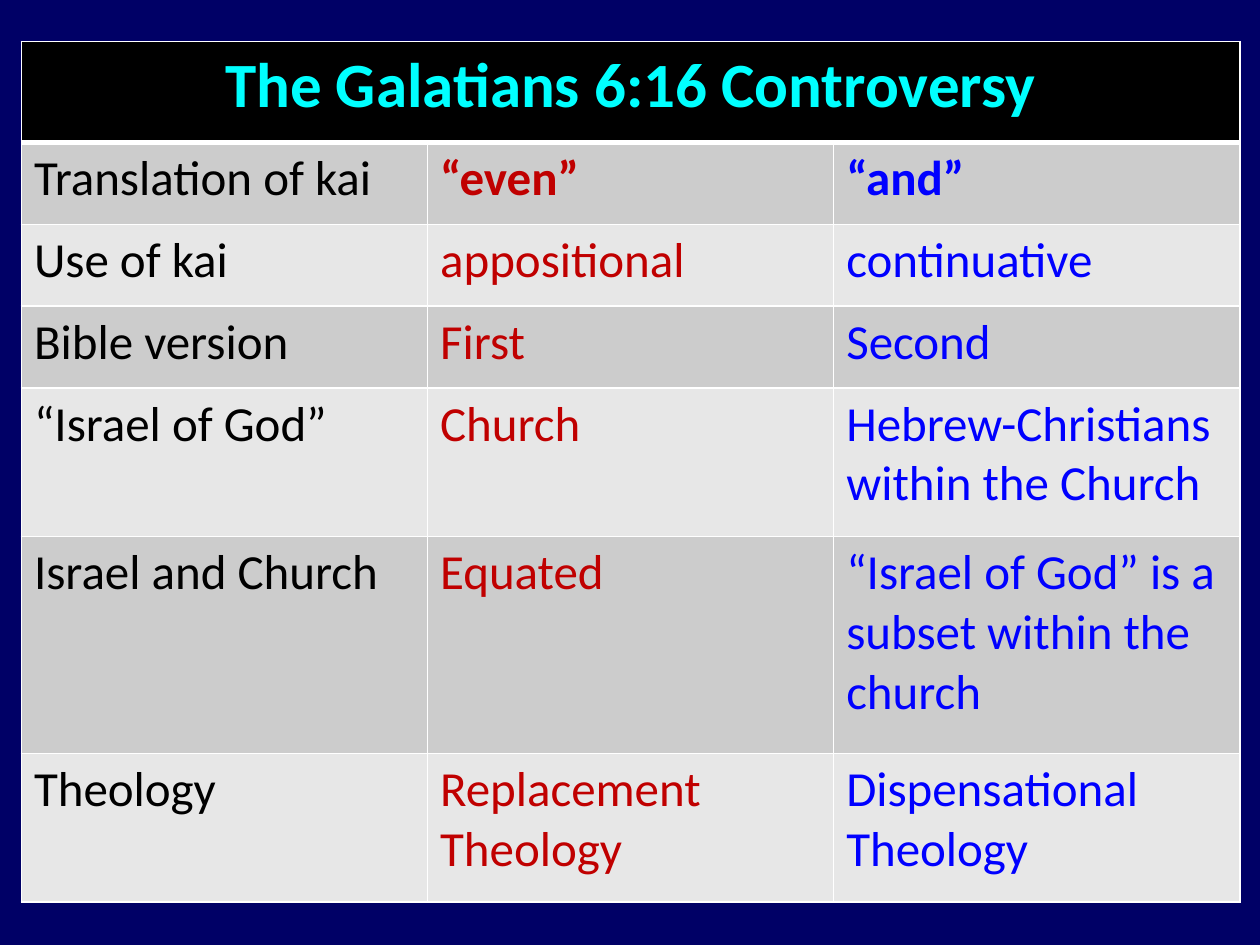
from lxml import etree
from pptx import Presentation
from pptx.dml.color import RGBColor
from pptx.enum import text
from pptx.oxml import ns
from pptx.util import Inches, Pt

COLORS = {
    "background": "000066", "header": "000000", "title": "00FFFF",
    "odd_row": "CCCCCC", "even_row": "E7E7E7", "border": "FFFFFF",
    "topic": "000000", "even": "C00000", "and": "0000FF",
}
TITLE = "The Galatians 6:16 Controversy"
ROWS = [
    ("Translation of kai", "“even”", "“and”"),
    ("Use of kai", "appositional", "continuative"),
    ("Bible version", "First", "Second"),
    ("“Israel of God”", "Church", "Hebrew-Christians within the Church"),
    ("Israel and Church", "Equated", "“Israel of God” is a subset within the church"),
    ("Theology", "Replacement Theology", "Dispensational Theology"),
]
ROW_HEIGHTS = [0.8, 0.65, 0.65, 0.65, 1.18, 1.72, 1.18]
COLUMN_COLORS = ["topic", "even", "and"]


def style_cell(cell, fill, widths):
    """Fill a cell and draw its borders; widths maps each side to points."""
    properties = cell._tc.get_or_add_tcPr()
    for side, width in widths.items():
        line = etree.SubElement(properties, ns.qn(f"a:ln{side}"), w=str(Pt(width)))
        solid = etree.SubElement(line, ns.qn("a:solidFill"))
        etree.SubElement(solid, ns.qn("a:srgbClr"), val=COLORS["border"])
    cell.fill.solid()
    cell.fill.fore_color.rgb = RGBColor.from_string(COLORS[fill])


def write_cell(cell, words, color, **font_format):
    cell.text = words
    font = cell.text_frame.paragraphs[0].runs[0].font
    font.color.rgb = RGBColor.from_string(COLORS[color])
    for name, value in {"name": "Calibri", **font_format}.items():
        setattr(font, name, value)


presentation = Presentation()
presentation.slide_width, presentation.slide_height = Inches(10), Inches(7.5)
slide = presentation.slides.add_slide(presentation.slide_layouts[6])
slide.background.fill.solid()
slide.background.fill.fore_color.rgb = RGBColor.from_string(COLORS["background"])

table = slide.shapes.add_table(
    len(ROW_HEIGHTS), len(COLUMN_COLORS),
    Inches(0.17), Inches(0.33), Inches(9.67), Inches(sum(ROW_HEIGHTS)),
).table
for row, height in zip(table.rows, ROW_HEIGHTS):
    row.height = Inches(height)

header = table.cell(0, 0)
header.merge(table.cell(0, len(COLUMN_COLORS) - 1))
for cell in table.rows[0].cells:
    style_cell(cell, "header", {"L": 1, "R": 1, "T": 1, "B": 3})
write_cell(header, TITLE, "title", size=Pt(36), bold=True)
header.text_frame.paragraphs[0].alignment = text.PP_ALIGN.CENTER

for row_number, entries in enumerate(ROWS, start=1):
    fill = "odd_row" if row_number % 2 else "even_row"
    top_width = 3 if row_number == 1 else 1
    for column, (words, color) in enumerate(zip(entries, COLUMN_COLORS)):
        cell = table.cell(row_number, column)
        style_cell(cell, fill, {"L": 1, "R": 1, "T": top_width, "B": 1})
        write_cell(cell, words, color, size=Pt(28), bold=row_number == 1 and column > 0)

presentation.save("out.pptx")
